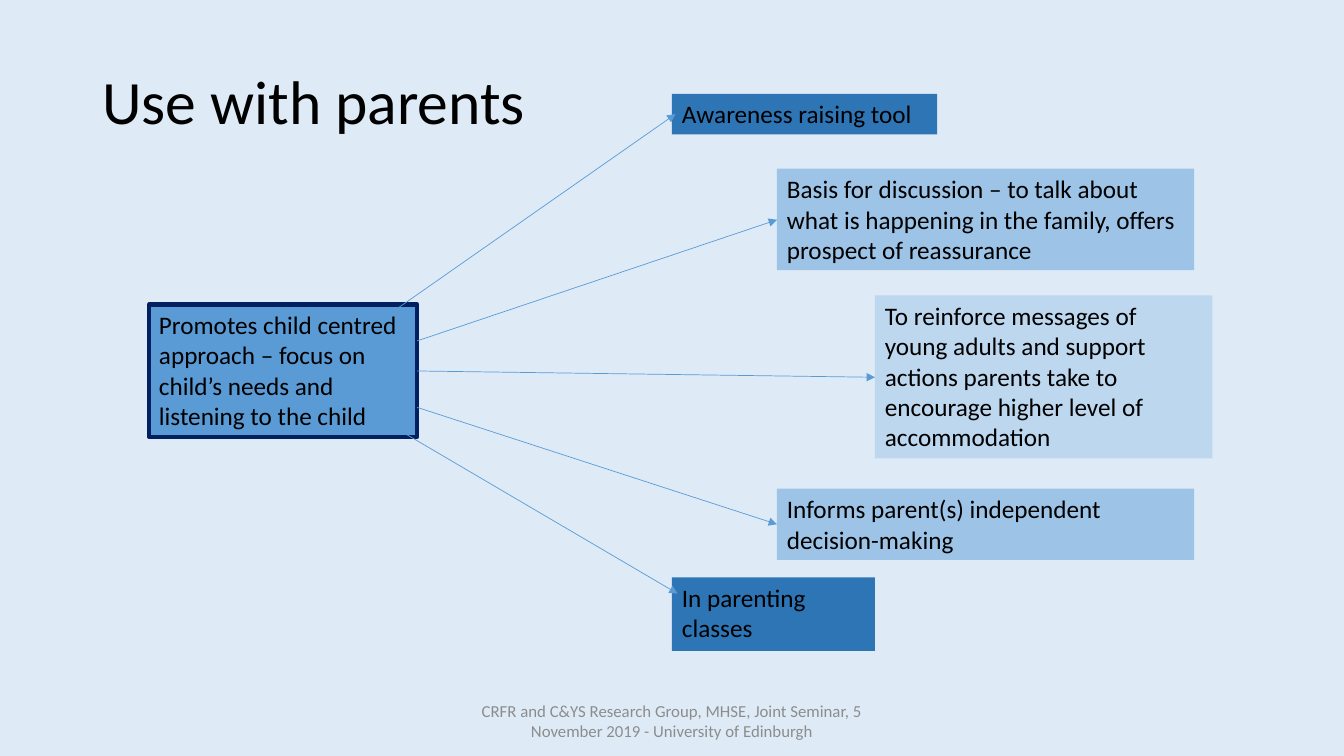
from lxml.etree import SubElement
from pptx import Presentation
from pptx.dml.color import RGBColor
from pptx.enum.shapes import MSO_CONNECTOR as CONN, MSO_SHAPE as SHAPE
from pptx.enum.text import MSO_ANCHOR as ANCHOR, MSO_AUTO_SIZE as FIT, PP_ALIGN as ALIGN
from pptx.oxml.ns import qn
from pptx.util import Pt

BLUE = "5B9BD5"
DARK, MID, LIGHT = "2E75B6", "9DC3E6", "BDD7EE"

CENTRE = (106.5, 217.5, 191.5, 94.5)

USES = [
    ("Awareness raising tool", (480, 67, 189.5, 29), DARK,
     (281.5, 222), (482.5, 81.5)),
    ("Basis for discussion – to talk about what is happening in the family, "
     "offers prospect of reassurance", (555, 120.5, 298, 72.5), MID,
     (298, 243.5), (555, 157)),
    ("To reinforce messages of young adults and support actions parents take "
     "to encourage higher level of accommodation", (625, 211, 241, 116.5), LIGHT,
     (298, 265), (625, 269.5)),
    ("Informs parent(s) independent decision-making", (555, 349, 298, 51), MID,
     (298, 291), (555, 374.5)),
    ("In parenting classes", (480, 412.5, 145, 52.5), DARK,
     (283, 306), (484, 424)),
]


def rgb(value):
    return RGBColor.from_string(value)


def points(values):
    return [Pt(v) for v in values]


def write(sp, text, size, color="000000", align=ALIGN.LEFT, anchor=ANCHOR.TOP):
    tf = sp.text_frame
    tf.text = text
    tf.word_wrap = True
    tf.vertical_anchor = anchor
    p = tf.paragraphs[0]
    p.alignment = align
    font = p.runs[0].font
    font.name = "Calibri"
    font.size = Pt(size)
    font.color.rgb = rgb(color)
    return tf


def add_text(s, text, box, size, **style):
    return write(s.shapes.add_textbox(*points(box)), text, size,
                 anchor=ANCHOR.MIDDLE, **style)


def add_box(s, text, box, fill, border=None):
    sp = s.shapes.add_shape(SHAPE.RECTANGLE, *points(box))
    sp.shadow.inherit = False
    sp.fill.solid()
    sp.fill.fore_color.rgb = rgb(fill)
    if border:
        sp.line.color.rgb = rgb(border)
        sp.line.width = Pt(3)
    else:
        sp.line.fill.background()
    write(sp, text, 18).auto_size = FIT.SHAPE_TO_FIT_TEXT


def add_arrow(s, start, end):
    line = s.shapes.add_connector(CONN.STRAIGHT, *points(start + end))
    line.line.color.rgb = rgb(BLUE)
    line.line.width = Pt(0.5)
    SubElement(line.line._get_or_add_ln(), qn("a:tailEnd"), type="triangle")
    SubElement(line._element.spPr, qn("a:effectLst"))


def main():
    prs = Presentation()
    prs.slide_width, prs.slide_height = Pt(960), Pt(540)
    s = prs.slides.add_slide(prs.slide_layouts[6])
    s.background.fill.solid()
    s.background.fill.fore_color.rgb = rgb("DEEBF7")

    title = add_text(s, "Use with parents", (66, 29, 335, 91), 44)
    title.paragraphs[0].line_spacing = 0.9
    add_text(s, "CRFR and C&YS Research Group, MHSE, Joint Seminar, "
             "5 November 2019 - University of Edinburgh",
             (318, 500.5, 324, 29), 12, color="8C8C8C", align=ALIGN.CENTER)

    add_box(s, "Promotes child centred approach – focus on child’s needs "
            "and listening to the child", CENTRE, BLUE, border="002060")
    for text, box, fill, _, _ in USES:
        add_box(s, text, box, fill)
    for _, _, _, start, end in USES:
        add_arrow(s, start, end)

    prs.save("out.pptx")


if __name__ == "__main__":
    main()
